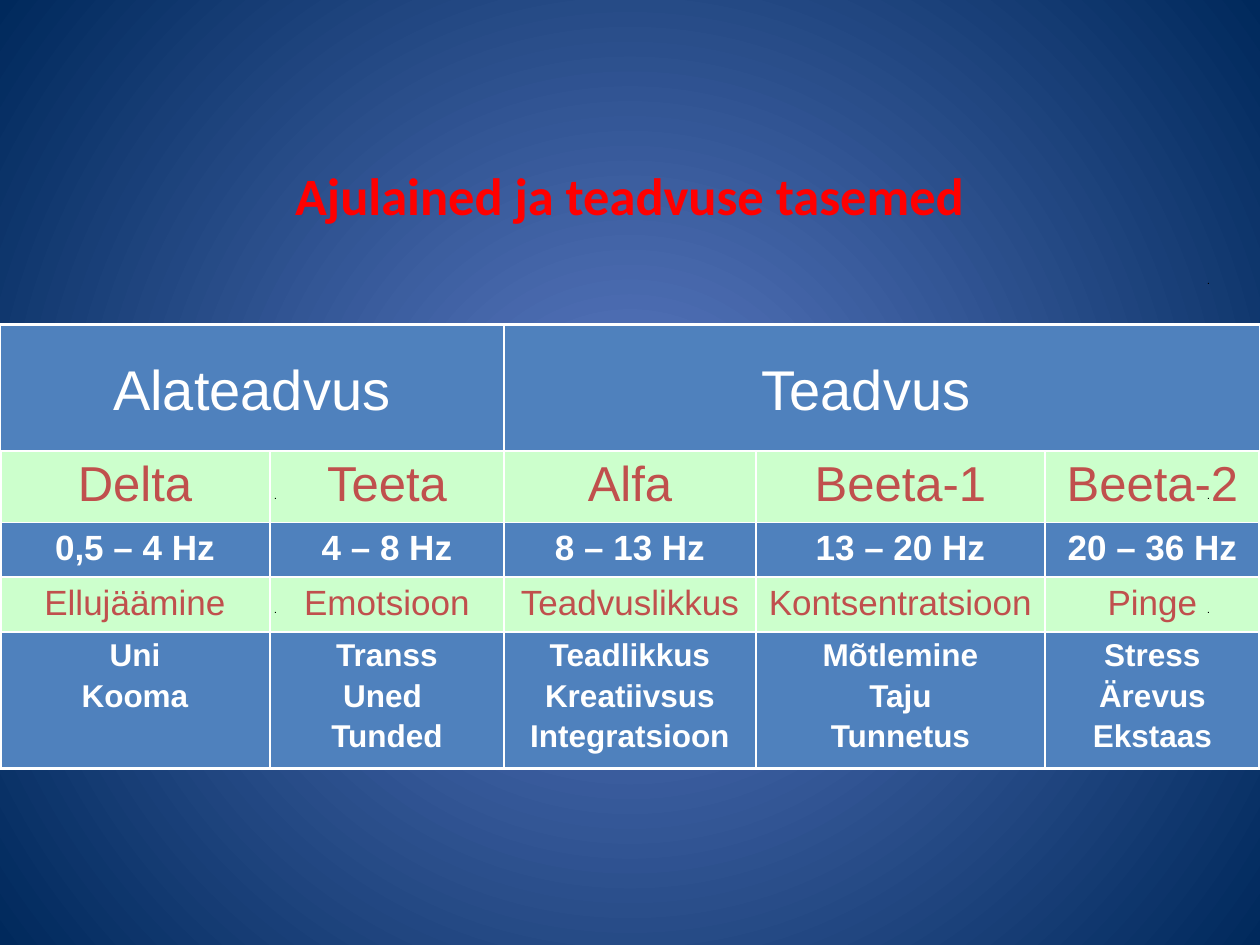
from typing import NamedTuple

from lxml import etree
from pptx import Presentation, util as u
from pptx.dml.color import RGBColor
from pptx.enum import shapes, text
from pptx.oxml import ns

EMU_PER_PX = 914400 / 126
COLORS = {
    "glow": "5E7CC5", "navy": "00295C", "blue": "4F81BD", "mint": "CCFFCC",
    "brick": "C0504D", "red": "FF0000", "white": "FFFFFF", "black": "000000",
}


class Row(NamedTuple):
    height: int
    fill: str
    color: str
    size: int
    bold: bool
    cells: list[str]


class Heading(NamedTuple):
    label: str
    left: int
    width: int


TABLE_TOP = 325
HEADER_HEIGHT = 126
COLUMN_WIDTHS = [270, 234, 252, 289, 215]
ROWS = [
    Row(HEADER_HEIGHT, "", "white", 18, False, [""] * 5),
    Row(68, "mint", "brick", 28, False, ["Delta", "Teeta", "Alfa", "Beeta-1", "Beeta-2"]),
    Row(53, "blue", "white", 20, True,
        ["0,5 – 4 Hz", "4 – 8 Hz", "8 – 13 Hz", "13 – 20 Hz", "20 – 36 Hz"]),
    Row(53, "mint", "brick", 20, False,
        ["Ellujäämine", "Emotsioon", "Teadvuslikkus", "Kontsentratsioon", "Pinge"]),
    Row(125, "blue", "white", 18, True,
        ["Uni\nKooma", "Transs\nUned \nTunded", "Teadlikkus\nKreatiivsus\nIntegratsioon",
         "Mõtlemine\nTaju\nTunnetus", "Stress\nÄrevus\nEkstaas"]),
]
HEADINGS = [Heading("Teadvus", 472, 788), Heading("Alateadvus", 0, 504)]
DOTS = [(1208, 283), (275, 498), (1208, 498), (275, 612), (1208, 612)]


def px(length: int) -> int:
    return round(length * EMU_PER_PX)


def rgb(name: str) -> RGBColor:
    return RGBColor.from_string(COLORS[name])


def write(frame, content: str, size: int, color: str, bold=False, font="Arial") -> None:
    frame.text = content
    for index, paragraph in enumerate(frame.paragraphs):
        paragraph.alignment = text.PP_ALIGN.CENTER
        paragraph.space_before = u.Pt(3 if index else 0)
        paragraph.font.name = font
        paragraph.font.size = u.Pt(size)
        paragraph.font.bold = bold
        paragraph.font.color.rgb = rgb(color)


def paint_background(slide) -> None:
    fill = slide.background.fill
    fill.gradient()
    for stop, color in zip(fill.gradient_stops, ("glow", "navy")):
        stop.color.rgb = rgb(color)
    gradient = slide.element.find(".//" + ns.qn("a:gradFill"))
    gradient.remove(gradient.find(ns.qn("a:lin")))
    circle = etree.SubElement(gradient, ns.qn("a:path"), path="circle")
    etree.SubElement(circle, ns.qn("a:fillToRect"), l="50000", t="50000", r="50000", b="50000")


def add_borders(cell, widths: dict[str, float]) -> None:
    properties = cell._tc.get_or_add_tcPr()
    for index, (side, width) in enumerate(widths.items()):
        line = etree.Element(ns.qn(f"a:ln{side}"), w=str(u.Pt(width)))
        solid = etree.SubElement(line, ns.qn("a:solidFill"))
        etree.SubElement(solid, ns.qn("a:srgbClr"), val=COLORS["white"])
        properties.insert(index, line)


def add_wave_table(slide) -> None:
    table = slide.shapes.add_table(
        len(ROWS), len(COLUMN_WIDTHS), 0, px(TABLE_TOP),
        px(sum(COLUMN_WIDTHS)), px(sum(row.height for row in ROWS))).table
    table.first_row = table.horz_banding = False
    for column, width in zip(table.columns, COLUMN_WIDTHS):
        column.width = px(width)
    last_row, last_column = len(ROWS) - 1, len(COLUMN_WIDTHS) - 1
    for i, row in enumerate(ROWS):
        table.rows[i].height = px(row.height)
        for j, content in enumerate(row.cells):
            cell = table.cell(i, j)
            write(cell.text_frame, content, row.size, row.color, row.bold)
            if row.fill:
                cell.fill.solid()
                cell.fill.fore_color.rgb = rgb(row.fill)
            else:
                cell.fill.background()
            # Outer edges are heavier than the inner grid
            outer = {"L": j == 0, "R": j == last_column, "T": i == 0, "B": i == last_row}
            add_borders(cell, {side: 2.25 if edge else 1 for side, edge in outer.items()})


def add_box(slide, left: int, top: int, width: int, height: int, fill: str):
    shape = slide.shapes.add_shape(
        shapes.MSO_SHAPE.RECTANGLE, px(left), px(top), px(width), px(height))
    shape.shadow.inherit = False
    shape.fill.solid()
    shape.fill.fore_color.rgb = rgb(fill)
    shape.line.fill.background()
    return shape


def add_heading(slide, heading: Heading) -> None:
    shape = add_box(slide, heading.left, TABLE_TOP, heading.width, HEADER_HEIGHT, "blue")
    shape.line.color.rgb = rgb("white")
    shape.line.width = u.Pt(0.75)
    shape.text_frame.word_wrap = False
    shape.text_frame.vertical_anchor = text.MSO_ANCHOR.MIDDLE
    write(shape.text_frame, heading.label, 32, "white")


def main() -> None:
    presentation = Presentation()
    presentation.slide_width, presentation.slide_height = px(1260), px(945)
    slide = presentation.slides.add_slide(presentation.slide_layouts[6])
    paint_background(slide)

    # Title
    title = slide.shapes.add_textbox(px(63), px(147), px(1134), px(95)).text_frame
    title.word_wrap = True
    title.vertical_anchor = text.MSO_ANCHOR.MIDDLE
    write(title, "Ajulained ja teadvuse tasemed", 30, "red", True, "Calibri")

    # Brain wave table, with small dots on it
    add_wave_table(slide)
    for left, top in DOTS:
        add_box(slide, left, top, 1, 1, "black")

    # Headings over the empty first row
    for heading in HEADINGS:
        add_heading(slide, heading)

    presentation.save("out.pptx")


if __name__ == "__main__":
    main()
